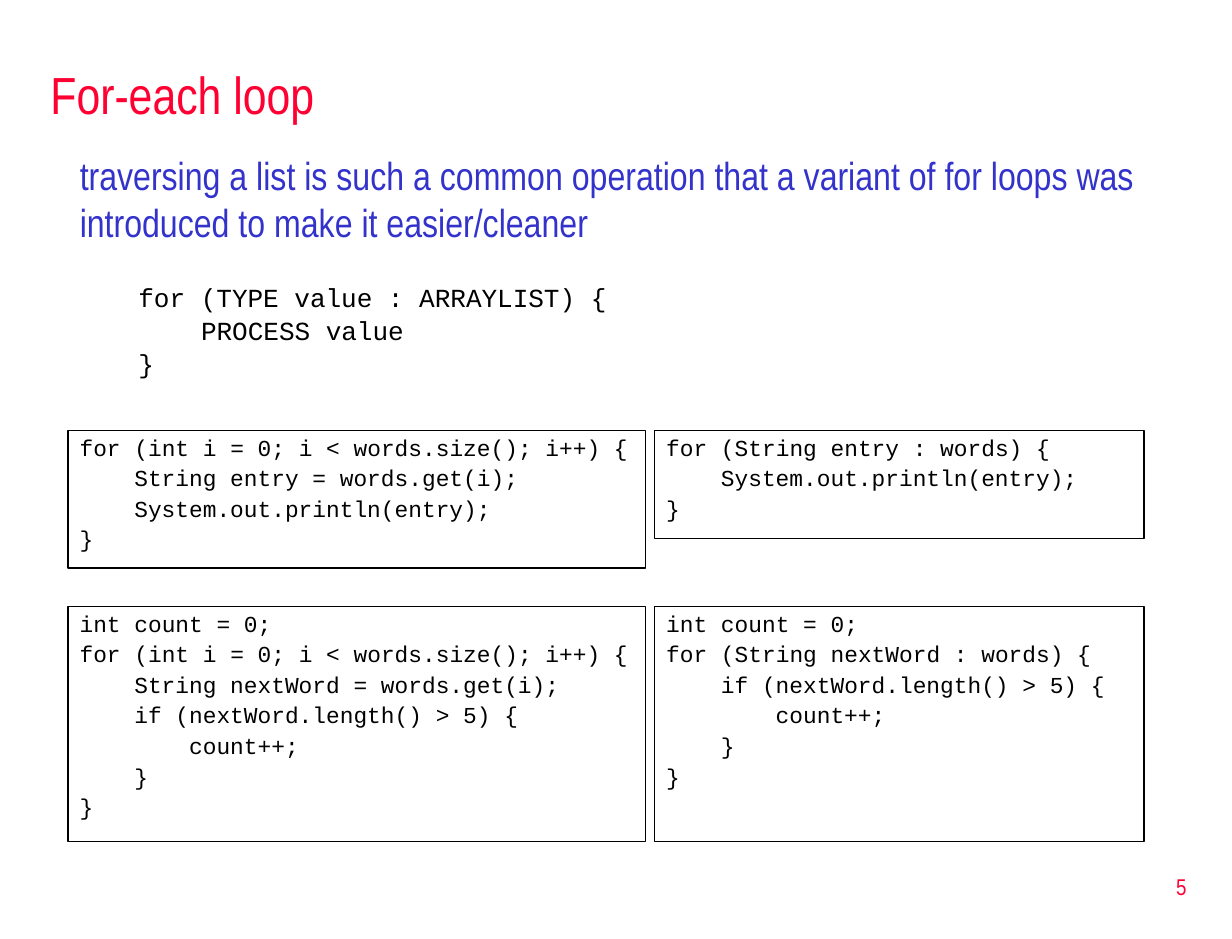
import pptx
import pptx.dml.color
import pptx.enum.shapes
import pptx.enum.text
import pptx.oxml
import pptx.oxml.ns
import pptx.util
from pptx.util import Inches

RED = pptx.dml.color.RGBColor(0xFF, 0x00, 0x33)
BLUE = pptx.dml.color.RGBColor(0x33, 0x33, 0xCC)
BLACK = pptx.dml.color.RGBColor(0, 0, 0)
NARROW = "Arial Narrow"
MONO = "Courier New"
ALIGN = pptx.enum.text.PP_ALIGN
ANCHOR = pptx.enum.text.MSO_ANCHOR

LEFT_COLUMN = (0.58, 4.92)
RIGHT_COLUMN = (5.58, 4.17)
TOP_ROW = 3.67
BOTTOM_ROW = 5.17

SYNTAX = """for (TYPE value : ARRAYLIST) {
    PROCESS value
}"""
INDEX_PRINT = """for (int i = 0; i < words.size(); i++) {
    String entry = words.get(i);
    System.out.println(entry);
}"""
EACH_PRINT = """for (String entry : words) {
    System.out.println(entry);
}"""
INDEX_COUNT = """int count = 0;
for (int i = 0; i < words.size(); i++) {
    String nextWord = words.get(i);
    if (nextWord.length() > 5) {
        count++;
    }
}"""
EACH_COUNT = """int count = 0;
for (String nextWord : words) {
    if (nextWord.length() > 5) {
        count++;
    }
}"""


class SlideBuilder:
    def __init__(self, deck):
        self.slide = deck.slides.add_slide(deck.slide_layouts[1])

    def place(self, box, left, top, width, height, anchor=ANCHOR.TOP):
        box.left, box.top = Inches(left), Inches(top)
        box.width, box.height = Inches(width), Inches(height)
        frame = box.text_frame
        frame.word_wrap = True
        frame.auto_size = pptx.enum.text.MSO_AUTO_SIZE.NONE
        frame.vertical_anchor = anchor
        return frame

    def add_text(self, para, text, size, font, color, align=ALIGN.LEFT, before=0, margin=0):
        para.alignment = align
        para.space_before = pptx.util.Pt(before)
        properties = para._p.get_or_add_pPr()
        properties.set("marL", str(Inches(margin)))
        properties.set("indent", "0")
        properties.append(pptx.oxml.parse_xml(f"<a:buNone {pptx.oxml.ns.nsdecls('a')}/>"))
        span = para.add_run()
        span.text = text
        span.font.size = pptx.util.Pt(size)
        span.font.name = font
        span.font.color.rgb = color

    def code(self, frame, source, size, before, margin=0, spacing=None):
        step = size * 0.6 / 72
        for line in source.splitlines():
            first = frame.paragraphs[0]
            para = frame.add_paragraph() if first.runs else first
            para.line_spacing = spacing
            text = line.lstrip()
            indent = margin + (len(line) - len(text)) * step
            self.add_text(para, text, size, MONO, BLACK, before=before, margin=indent)

    def title(self, text):
        frame = self.place(self.slide.shapes.title, 0.33, 0.42, 9.92, 0.75, ANCHOR.MIDDLE)
        self.add_text(frame.paragraphs[0], text, 32, NARROW, RED)

    def body(self, text, source):
        frame = self.place(self.slide.placeholders[1], 0.58, 1.24, 9.58, 1.99)
        self.add_text(frame.paragraphs[0], text, 24, NARROW, BLUE, before=3)
        self.code(frame, source, 16, 1, margin=0.5)
        for para in frame.paragraphs[1:]:
            para.level = 1
        frame.paragraphs[1].space_before = pptx.util.Pt(22)

    def code_box(self, column, top, height, source):
        left, width = column
        box = self.slide.shapes.add_shape(
            pptx.enum.shapes.MSO_SHAPE.RECTANGLE, 0, 0, 0, 0)
        box.shadow.inherit = False
        box.fill.background()
        box.line.color.rgb = BLACK
        box.line.width = pptx.util.Pt(0.75)
        frame = self.place(box, left, top, width, height)
        self.code(frame, source, 14, 3.6, spacing=0.9)

    def page_number(self, text):
        box = self.slide.shapes.add_textbox(0, 0, 0, 0)
        frame = self.place(box, 8.02, 7.29, 2.19, 0.53, ANCHOR.MIDDLE)
        self.add_text(frame.paragraphs[0], text, 14, NARROW, RED, ALIGN.RIGHT)


def main():
    deck = pptx.Presentation()
    deck.slide_width, deck.slide_height = Inches(10.5), Inches(8)
    page = SlideBuilder(deck)
    page.title("For-each loop")
    page.body("traversing a list is such a common operation that a variant of for loops "
              "was introduced to make it easier/cleaner", SYNTAX)
    page.code_box(LEFT_COLUMN, TOP_ROW, 1.17, INDEX_PRINT)
    page.code_box(RIGHT_COLUMN, TOP_ROW, 0.92, EACH_PRINT)
    page.code_box(LEFT_COLUMN, BOTTOM_ROW, 2, INDEX_COUNT)
    page.code_box(RIGHT_COLUMN, BOTTOM_ROW, 2, EACH_COUNT)
    page.page_number("5")
    deck.save("out.pptx")


if __name__ == "__main__":
    main()
